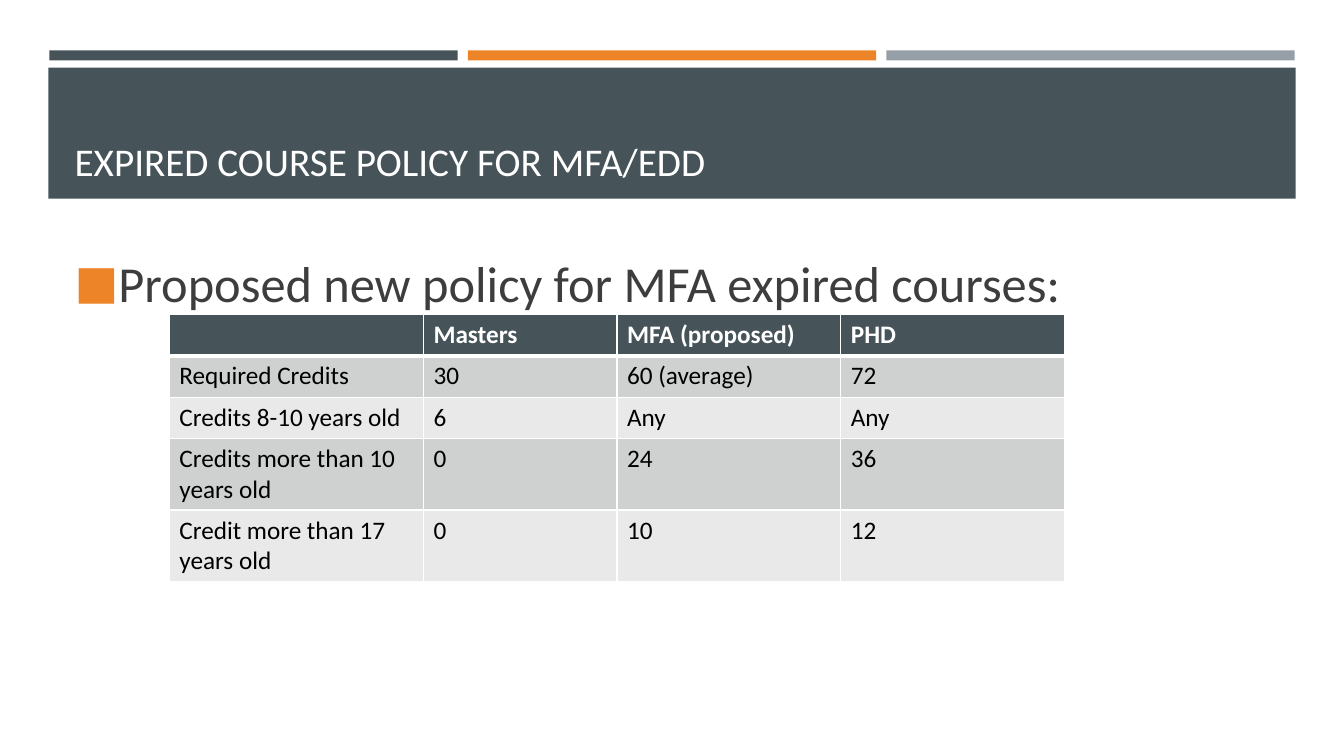
from dataclasses import dataclass

from lxml.etree import SubElement
from pptx import Presentation
from pptx.dml.color import RGBColor
from pptx.enum.shapes import MSO_SHAPE as Shape
from pptx.enum.text import MSO_ANCHOR as Anchor, MSO_AUTO_SIZE as AutoSize, PP_ALIGN as Align
from pptx.oxml.ns import qn
from pptx.util import Inches, Pt

COLOURS = {
    "slate": "465359",
    "orange": "ED8428",
    "grey": "969FA7",
    "white": "FFFFFF",
    "black": "000000",
    "text": "3D3D3D",
    "dark band": "CFD1D1",
    "light band": "E9E9EA",
}
FONT = "Calibri"
COLUMN_WIDTHS = (2.52, 1.92, 2.22, 2.22)
ROW_HEIGHT = 0.41
POLICY_ROWS = (
    ("", "Masters", "MFA (proposed)", "PHD"),
    ("Required Credits", "30", "60 (average)", "72"),
    ("Credits 8-10 years old", "6", "Any", "Any"),
    ("Credits more than 10 years old", "0", "24", "36"),
    ("Credit more than 17 years old", "0", "10", "12"),
)


@dataclass(frozen=True)
class Panel:
    left: float
    top: float
    width: float
    height: float
    colour: str


PANELS = [
    Panel(0.49 + 4.15 * index, 0.5, 4.05, 0.1, colour)
    for index, colour in enumerate(("slate", "orange", "grey"))
] + [Panel(0.48, 0.67, 12.37, 1.3, "slate")]


def rgb(colour: str) -> RGBColor:
    """Look up a named colour."""
    return RGBColor.from_string(COLOURS[colour])


def draw_panel(page, panel: Panel) -> None:
    """Draw a plain filled rectangle."""
    box = page.shapes.add_shape(
        Shape.RECTANGLE, Inches(panel.left), Inches(panel.top),
        Inches(panel.width), Inches(panel.height))
    box.shadow.inherit = False
    box.fill.solid()
    box.fill.fore_color.rgb = rgb(panel.colour)
    box.line.fill.background()


def format_text(para, size: int, colour: str, bold: bool = False) -> None:
    """Left-align a paragraph and format its runs."""
    para.alignment = Align.LEFT
    for span in para.runs:
        span.font.name = FONT
        span.font.size = Pt(size)
        span.font.bold = bold
        span.font.color.rgb = rgb(colour)


def fill_placeholder(box, text: str, top: float, height: float, anchor: Anchor):
    """Move a placeholder, set its text and return the paragraph."""
    box.left, box.top = Inches(0.64), Inches(top)
    box.width, box.height = Inches(12.06), Inches(height)
    frame = box.text_frame
    frame.text = text
    frame.word_wrap = True
    frame.auto_size = AutoSize.NONE
    frame.vertical_anchor = anchor
    return frame.paragraphs[0]


def add_square_bullet(para) -> None:
    """Give a paragraph an orange square bullet with a hanging indent."""
    para.space_before, para.space_after = Pt(0), Pt(6)
    properties = para._p.get_or_add_pPr()
    properties.set("marL", str(Inches(0.33)))
    properties.set("indent", str(-Inches(0.33)))
    colour = SubElement(properties, qn("a:buClr"))
    SubElement(colour, qn("a:srgbClr"), val=COLOURS["orange"])
    SubElement(properties, qn("a:buSzPct"), val="92000")
    SubElement(properties, qn("a:buFont"), typeface=FONT)
    SubElement(properties, qn("a:buChar"), char="■")


def add_borders(cell, top: int, bottom: int) -> None:
    """Put white borders round a cell, with widths in points."""
    properties = cell._tc.get_or_add_tcPr()
    for side, width in (("L", 1), ("R", 1), ("T", top), ("B", bottom)):
        line = SubElement(properties, qn(f"a:ln{side}"), w=str(Pt(width)))
        fill = SubElement(line, qn("a:solidFill"))
        SubElement(fill, qn("a:srgbClr"), val=COLOURS["white"])


def draw_policy_table(page) -> None:
    """Draw the credit table with a dark header and alternating rows."""
    table = page.shapes.add_table(
        len(POLICY_ROWS), len(COLUMN_WIDTHS), Inches(1.68), Inches(3.12),
        Inches(sum(COLUMN_WIDTHS)), Inches(ROW_HEIGHT * len(POLICY_ROWS))).table
    for column, width in zip(table.columns, COLUMN_WIDTHS):
        column.width = Inches(width)
    for row_index, texts in enumerate(POLICY_ROWS):
        header = row_index == 0
        band = "slate" if header else "dark band" if row_index % 2 else "light band"
        for column_index, text in enumerate(texts):
            cell = table.cell(row_index, column_index)
            cell.text = text
            format_text(cell.text_frame.paragraphs[0], 18,
                        "white" if header else "black", header)
            add_borders(cell, 3 if row_index == 1 else 1, 3 if header else 1)
            cell.fill.solid()
            cell.fill.fore_color.rgb = rgb(band)


def main() -> None:
    """Build and save the slide."""
    deck = Presentation()
    deck.slide_width, deck.slide_height = Inches(13.33), Inches(7.5)
    page = deck.slides.add_slide(deck.slide_layouts[1])
    title, body = page.placeholders
    for panel in PANELS:
        draw_panel(page, panel)
    for box in (title, body):
        page.shapes._spTree.append(box._element)

    heading = fill_placeholder(
        title, "EXPIRED COURSE POLICY FOR MFA/EDD", 0.77, 1.11, Anchor.BOTTOM)
    format_text(heading, 28, "white")
    point = fill_placeholder(
        body, "Proposed new policy for MFA expired courses:", 2.38, 1.47, Anchor.MIDDLE)
    body.text_frame.margin_bottom = Inches(0.67)
    format_text(point, 36, "text")
    add_square_bullet(point)
    draw_policy_table(page)
    deck.save("out.pptx")


if __name__ == "__main__":
    main()
